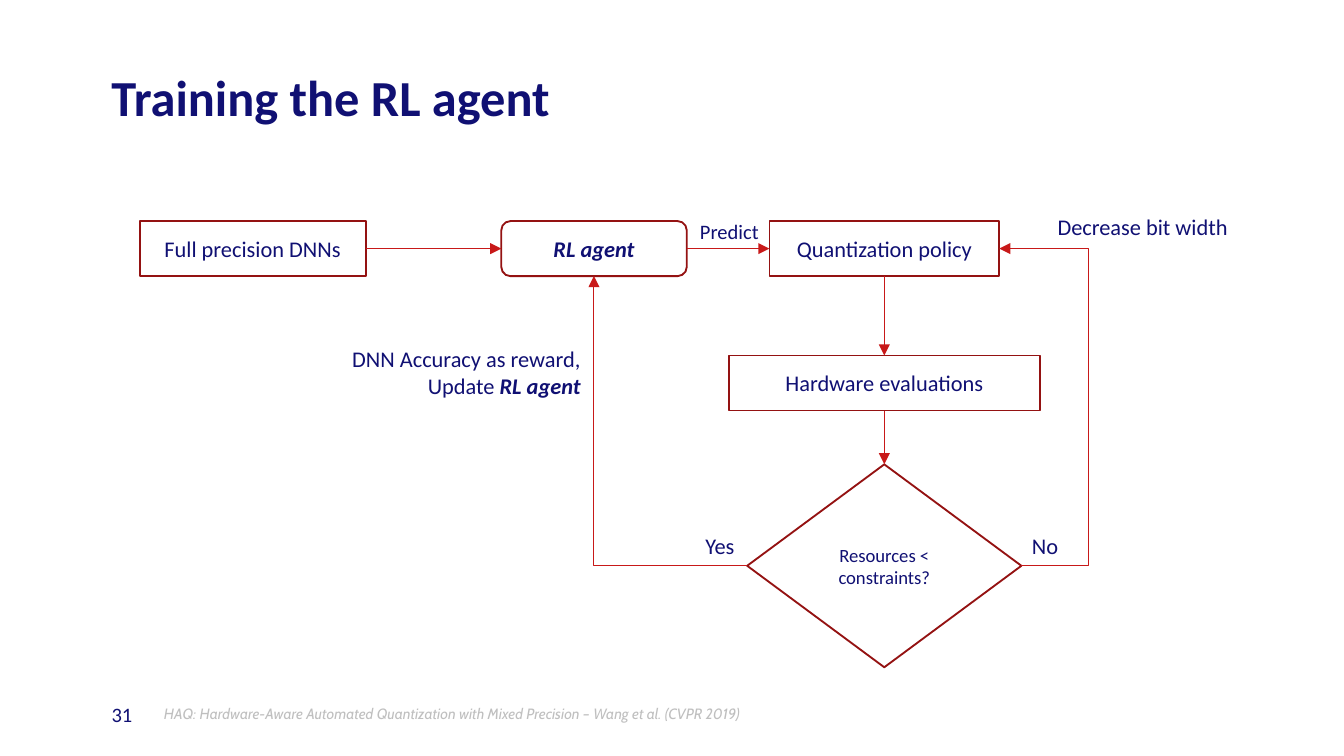
from lxml import etree
from pptx import Presentation
from pptx.dml.color import RGBColor
from pptx.enum.shapes import MSO_CONNECTOR, MSO_SHAPE
from pptx.enum.text import MSO_ANCHOR, PP_ALIGN
from pptx.oxml.ns import qn
from pptx.util import Inches, Pt

NAVY = RGBColor(0x10, 0x10, 0x73)
DARK_RED = RGBColor(0x94, 0x12, 0x12)
RED = RGBColor(0xC8, 0x19, 0x19)
GREY = RGBColor(0xBF, 0xBF, 0xBF)
WHITE = RGBColor(0xFF, 0xFF, 0xFF)

WIDTH = 10
HEIGHT = WIDTH * 9 / 16
FOOTER_TOP = 5
FOOTER_HEIGHT = HEIGHT - FOOTER_TOP
COLUMNS = {"network": 1.88, "agent": 4.42, "policy": 6.58}
ROWS = {"top": 1.85, "middle": 2.85, "bottom": 4.21}
BOX_HEIGHT = 0.41
RETURN_X = 8.1  # vertical part of the "No" branch

TITLE = "Training the RL agent"
PAGE_NUMBER = "31"
CITATION = "HAQ: Hardware-Aware Automated Quantization with Mixed Precision – Wang et al. (CVPR 2019)"

# name: (text, preset, column, row, width, height, font format)
NODES = {
    "network": ("Full precision DNNs", MSO_SHAPE.FLOWCHART_PROCESS,
                "network", "top", 1.68, BOX_HEIGHT, {}),
    "agent": ("RL agent", MSO_SHAPE.FLOWCHART_ALTERNATE_PROCESS,
              "agent", "top", 1.38, BOX_HEIGHT, {"bold": True, "italic": True}),
    "policy": ("Quantization policy", MSO_SHAPE.FLOWCHART_PROCESS,
               "policy", "top", 1.71, BOX_HEIGHT, {}),
    "hardware": ("Hardware evaluations", MSO_SHAPE.FLOWCHART_PROCESS,
                 "policy", "middle", 2.31, BOX_HEIGHT, {}),
    "decision": ("Resources < constraints?", MSO_SHAPE.FLOWCHART_DECISION,
                 "policy", "bottom", 2.04, 1.51, {"size": 10}),
}
TOP, LEFT, BOTTOM, RIGHT = range(4)
ARROWS = [
    ("network", RIGHT, "agent", LEFT),
    ("agent", RIGHT, "policy", LEFT),
    ("policy", BOTTOM, "hardware", TOP),
    ("hardware", BOTTOM, "decision", TOP),
]
# paragraphs of (text, emphasised) runs, left, top, width, height, format
LABELS = [
    ([[("No", False)]], 7.58, 3.91, 0.51, 0.3, {}),
    ([[("Decrease bit width", False)]], 7.77, 1.54, 1.71, 0.3, {}),
    ([[("Yes", False)]], 5.15, 3.91, 0.54, 0.3, {}),
    ([[("DNN Accuracy as reward,", False)], [("Update ", False), ("RL agent", True)]],
     2.22, 2.52, 2.2, 0.5, {"align": PP_ALIGN.RIGHT}),
    ([[("Predict", False)]], 5.11, 1.58, 0.83, 0.29, {"size": 11}),
]


def write(shape, text, size=12, font="Calibri", color=NAVY, bold=False, italic=False,
          align=PP_ALIGN.LEFT, anchor=MSO_ANCHOR.TOP, insets=None, spacing=None):
    """Fill a shape with a string, or with paragraphs of (text, emphasised) runs."""
    frame = shape.text_frame
    frame.word_wrap = True
    frame.vertical_anchor = anchor
    if insets:
        (frame.margin_left, frame.margin_top,
         frame.margin_right, frame.margin_bottom) = map(Inches, insets)
    paragraphs = [[(text, False)]] if isinstance(text, str) else text
    for index, runs in enumerate(paragraphs):
        paragraph = frame.paragraphs[0] if index == 0 else frame.add_paragraph()
        paragraph.alignment = align
        if spacing:
            paragraph.line_spacing = Pt(spacing)
        for words, emphasised in runs:
            run = paragraph.add_run()
            run.text = words
            run.font.name = font
            run.font.size = Pt(size)
            run.font.color.rgb = color
            run.font.bold = bold or emphasised
            run.font.italic = italic or emphasised


def add_text(slide, text, left, top, width, height, **style):
    box = slide.shapes.add_textbox(*map(Inches, (left, top, width, height)))
    write(box, text, **style)


def add_box(slide, preset, left, top, width, height, outline=None):
    shape = slide.shapes.add_shape(preset, *map(Inches, (left, top, width, height)))
    shape.shadow.inherit = False
    shape.fill.solid()
    shape.fill.fore_color.rgb = WHITE
    if outline:
        shape.line.color.rgb = outline
        shape.line.width = Pt(1)
    else:
        shape.line.fill.background()
    return shape


def add_arrow(slide, kind, start=(0, 0), end=(0, 0)):
    arrow = slide.shapes.add_connector(kind, *map(Inches, (*start, *end)))
    arrow.line.color.rgb = RED
    arrow.line.width = Pt(0.5)
    properties = arrow._element.spPr
    etree.SubElement(properties.find(qn("a:ln")), qn("a:tailEnd"), type="triangle")
    etree.SubElement(properties, qn("a:effectLst"))
    return arrow


def add_branches(slide):
    """Draw the two bent arrows that leave the sides of the decision."""
    decision_half = NODES["decision"][4] / 2
    policy_right = COLUMNS["policy"] + NODES["policy"][4] / 2
    start_x = COLUMNS["policy"] + decision_half
    no_branch = add_arrow(slide, MSO_CONNECTOR.ELBOW, (start_x, ROWS["bottom"]),
                          (policy_right, ROWS["top"]))
    geometry = no_branch._element.spPr.find(qn("a:prstGeom"))
    share = (start_x - RETURN_X) / (start_x - policy_right)
    etree.SubElement(geometry.find(qn("a:avLst")), qn("a:gd"),
                     name="adj1", fmla=f"val {round(share * 100000)}")

    yes_branch = add_arrow(slide, MSO_CONNECTOR.ELBOW,
                           (COLUMNS["policy"] - decision_half, ROWS["bottom"]),
                           (COLUMNS["agent"], ROWS["top"] + BOX_HEIGHT / 2))
    yes_branch._element.spPr.find(qn("a:prstGeom")).set("prst", "bentConnector2")


def main():
    presentation = Presentation()
    presentation.slide_width = Inches(WIDTH)
    presentation.slide_height = Inches(HEIGHT)
    slide = presentation.slides.add_slide(presentation.slide_layouts[6])

    add_text(slide, TITLE, 0.83, 0.57, 8.26, 0.59, size=27, bold=True,
             insets=(0, 0, 0, 0), spacing=27)
    number = add_box(slide, MSO_SHAPE.RECTANGLE, 0, FOOTER_TOP, 1.22, FOOTER_HEIGHT)
    write(number, PAGE_NUMBER, size=11, anchor=MSO_ANCHOR.MIDDLE, insets=(0.83, 0, 0, 0))

    nodes = {}
    for name, (text, preset, column, row, width, height, style) in NODES.items():
        nodes[name] = add_box(slide, preset, COLUMNS[column] - width / 2,
                              ROWS[row] - height / 2, width, height, outline=DARK_RED)
        write(nodes[name], text, align=PP_ALIGN.CENTER, anchor=MSO_ANCHOR.MIDDLE, **style)

    for source, source_side, target, target_side in ARROWS:
        arrow = add_arrow(slide, MSO_CONNECTOR.STRAIGHT)
        arrow.begin_connect(nodes[source], source_side)
        arrow.end_connect(nodes[target], target_side)
    add_branches(slide)

    for text, left, top, width, height, style in LABELS:
        add_text(slide, text, left, top, width, height, **style)

    citation = add_box(slide, MSO_SHAPE.RECTANGLE, 1.22, FOOTER_TOP, 7.7, FOOTER_HEIGHT)
    write(citation, CITATION, size=8, font="Cabin", color=GREY, italic=True,
          anchor=MSO_ANCHOR.MIDDLE, insets=(0, 0, 0, 0))
    presentation.save("out.pptx")


if __name__ == "__main__":
    main()
